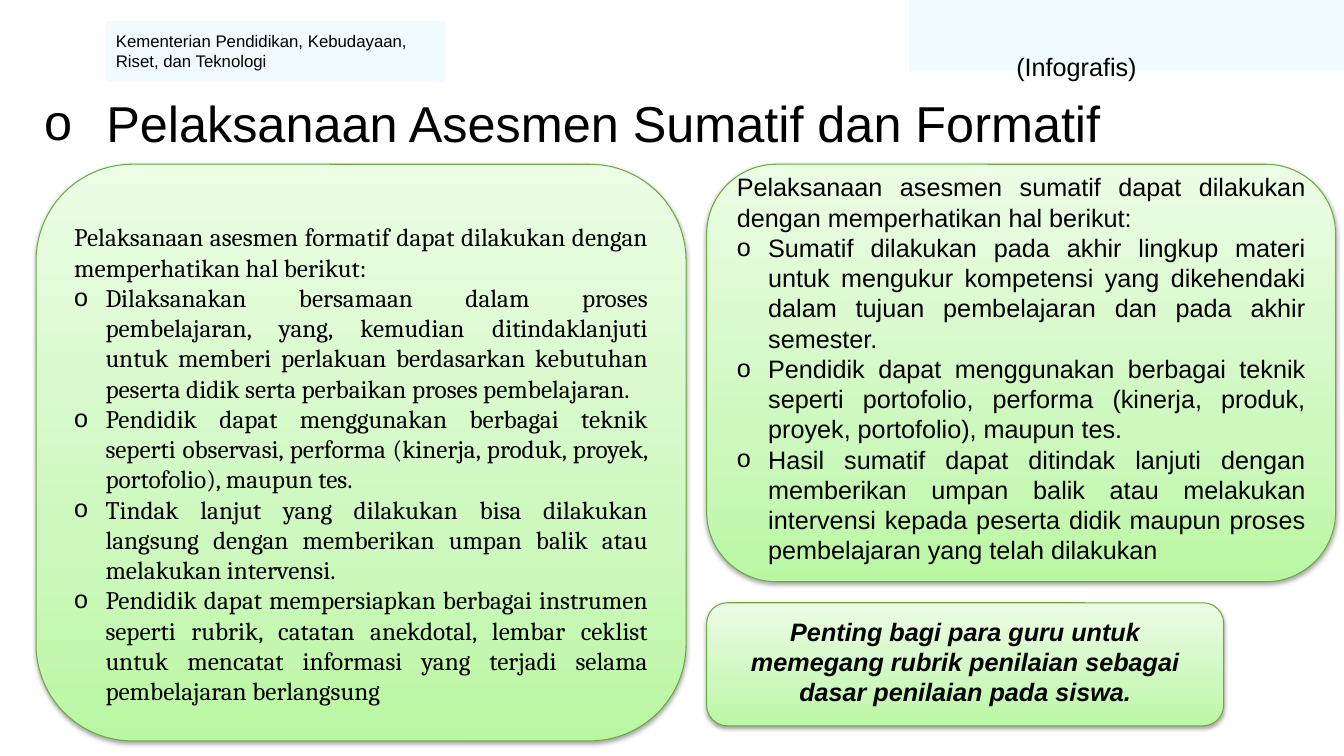
import pptx
import pptx.util
import pptx.oxml
import pptx.oxml.ns
import pptx.dml.color
import pptx.enum.shapes
import pptx.enum.text

Cm = pptx.util.Cm
Pt = pptx.util.Pt
SHAPE = pptx.enum.shapes.MSO_SHAPE
ALIGN = pptx.enum.text.PP_ALIGN
ANCHOR = pptx.enum.text.MSO_ANCHOR
NS = pptx.oxml.ns.nsdecls("a")

COLORS = {
    "text": "000000",
    "band": "F0FBFF",
    "edge": "6CAB42",
    "deep": "BBF7A3",
    "mid": "CDF8BE",
    "pale": "ECFDE5",
}

FORMATIVE = [
    "Pelaksanaan asesmen formatif dapat dilakukan dengan memperhatikan hal berikut:",
    "Dilaksanakan bersamaan dalam proses pembelajaran, yang, kemudian ditindaklanjuti untuk memberi perlakuan berdasarkan kebutuhan peserta didik serta perbaikan proses pembelajaran.",
    "Pendidik dapat menggunakan berbagai teknik seperti observasi, performa (kinerja, produk, proyek, portofolio), maupun tes.",
    "Tindak lanjut yang dilakukan bisa dilakukan langsung dengan memberikan umpan balik atau melakukan intervensi.",
    "Pendidik dapat mempersiapkan berbagai instrumen seperti rubrik, catatan anekdotal, lembar ceklist untuk mencatat informasi yang terjadi selama pembelajaran berlangsung",
]
SUMMATIVE = [
    "Pelaksanaan asesmen sumatif dapat dilakukan dengan memperhatikan hal berikut:",
    "Sumatif dilakukan pada akhir lingkup materi untuk mengukur kompetensi yang dikehendaki dalam tujuan pembelajaran dan pada akhir semester.",
    "Pendidik dapat menggunakan berbagai teknik seperti portofolio, performa (kinerja, produk, proyek, portofolio), maupun tes.",
    "Hasil sumatif dapat ditindak lanjuti dengan memberikan umpan balik atau melakukan intervensi kepada peserta didik maupun proses pembelajaran yang telah dilakukan",
]


def rgb(name):
    return pptx.dml.color.RGBColor.from_string(COLORS[name])


def add_bullet(p, indent):
    pPr = p._p.get_or_add_pPr()
    pPr.set("marL", str(Cm(indent)))
    pPr.set("indent", str(-Cm(indent)))
    for xml in (
        f'<a:buClr {NS}><a:srgbClr val="{COLORS["text"]}"/></a:buClr>',
        f'<a:buFont {NS} typeface="Arial"/>',
        f'<a:buChar {NS} char="o"/>',
    ):
        pPr.append(pptx.oxml.parse_xml(xml))


def write(tf, text, size=18, font="Arial", align=ALIGN.LEFT, indent=0,
          spacing=None, bold=False, italic=False, first=True):
    p = tf.paragraphs[0] if first else tf.add_paragraph()
    if indent:
        add_bullet(p, indent)
    p.alignment = align
    p.line_spacing = spacing or Pt(size * 1.2)
    r = p.add_run()
    r.text = text
    r.font.size = Pt(size)
    r.font.name = font
    r.font.bold = bold
    r.font.italic = italic
    r.font.color.rgb = rgb("text")


def write_list(tf, lines, font):
    for i, line in enumerate(lines):
        write(tf, line, font=font, align=ALIGN.JUSTIFY,
              indent=0.79 if i else 0, first=i == 0)


def frame(sp, anchor, side=0.25, top=0, bottom=0):
    tf = sp.text_frame
    tf.word_wrap = True
    tf.vertical_anchor = anchor
    tf.margin_left = tf.margin_right = Cm(side)
    tf.margin_top = Cm(top)
    tf.margin_bottom = Cm(bottom)
    return tf


def add_text(s, box, anchor=ANCHOR.TOP, side=0):
    sp = s.shapes.add_textbox(*map(Cm, box))
    return frame(sp, anchor, side)


def add_band(s, box):
    sp = s.shapes.add_shape(SHAPE.RECTANGLE, *map(Cm, box))
    sp.shadow.inherit = False
    sp.fill.solid()
    sp.fill.fore_color.rgb = rgb("band")
    sp.line.fill.background()
    return frame(sp, ANCHOR.MIDDLE)


def add_panel(s, box, top=0):
    sp = s.shapes.add_shape(SHAPE.ROUNDED_RECTANGLE, *map(Cm, box))
    sp.adjustments[0] = 0.167
    sp.line.color.rgb = rgb("edge")
    sp.line.width = Pt(0.75)
    sp.shadow.inherit = False
    stops = "".join(
        f'<a:gs pos="{pos * 1000}"><a:srgbClr val="{COLORS[name]}"/></a:gs>'
        for pos, name in ((0, "deep"), (35, "mid"), (100, "pale")))
    spPr = sp._element.spPr
    spPr.find(pptx.oxml.ns.qn("a:prstGeom")).addnext(pptx.oxml.parse_xml(
        f'<a:gradFill {NS} rotWithShape="1"><a:gsLst>{stops}</a:gsLst>'
        '<a:lin ang="16200000" scaled="0"/></a:gradFill>'))
    spPr.find(pptx.oxml.ns.qn("a:effectLst")).append(pptx.oxml.parse_xml(
        f'<a:outerShdw {NS} blurRad="{Pt(3.1)}" dist="{Pt(1.6)}" dir="5400000" rotWithShape="0">'
        f'<a:srgbClr val="{COLORS["text"]}"><a:alpha val="37000"/></a:srgbClr></a:outerShdw>'))
    return frame(sp, ANCHOR.TOP, top=top)


def main():
    prs = pptx.Presentation()
    prs.slide_width, prs.slide_height = Cm(33.87), Cm(19.05)
    s = prs.slides.add_slide(prs.slide_layouts[6])

    add_band(s, (22.91, 0, 10.96, 1.8))
    ministry = add_band(s, (2.67, 0.53, 8.56, 1.52))
    write(ministry, "Kementerian Pendidikan, Kebudayaan, Riset, dan Teknologi", size=12)

    title = add_text(s, (0.86, 1.63, 29.31, 3.1), ANCHOR.MIDDLE, 0.25)
    write(title, "Pelaksanaan Asesmen Sumatif dan Formatif", size=36,
          indent=1.57, spacing=0.9)

    formative = add_panel(s, (0.91, 4.14, 16.38, 14.53), top=0.74)
    write_list(formative, FORMATIVE, "Cambria")

    add_panel(s, (17.81, 4.14, 15.85, 10.52))
    summative = add_text(s, (18.57, 4.33, 14.33, 9.91))
    write_list(summative, SUMMATIVE, "Arial")
    label = add_text(s, (24.63, 1.29, 5, 0.76))
    write(label, "(Infografis)", align=ALIGN.CENTER)

    note = add_panel(s, (17.81, 15.19, 13.03, 3.1), top=0.18)
    write(note, "Penting bagi para guru untuk memegang rubrik penilaian sebagai dasar penilaian pada siswa.",
          align=ALIGN.CENTER, bold=True, italic=True)

    prs.save("out.pptx")


if __name__ == "__main__":
    main()
